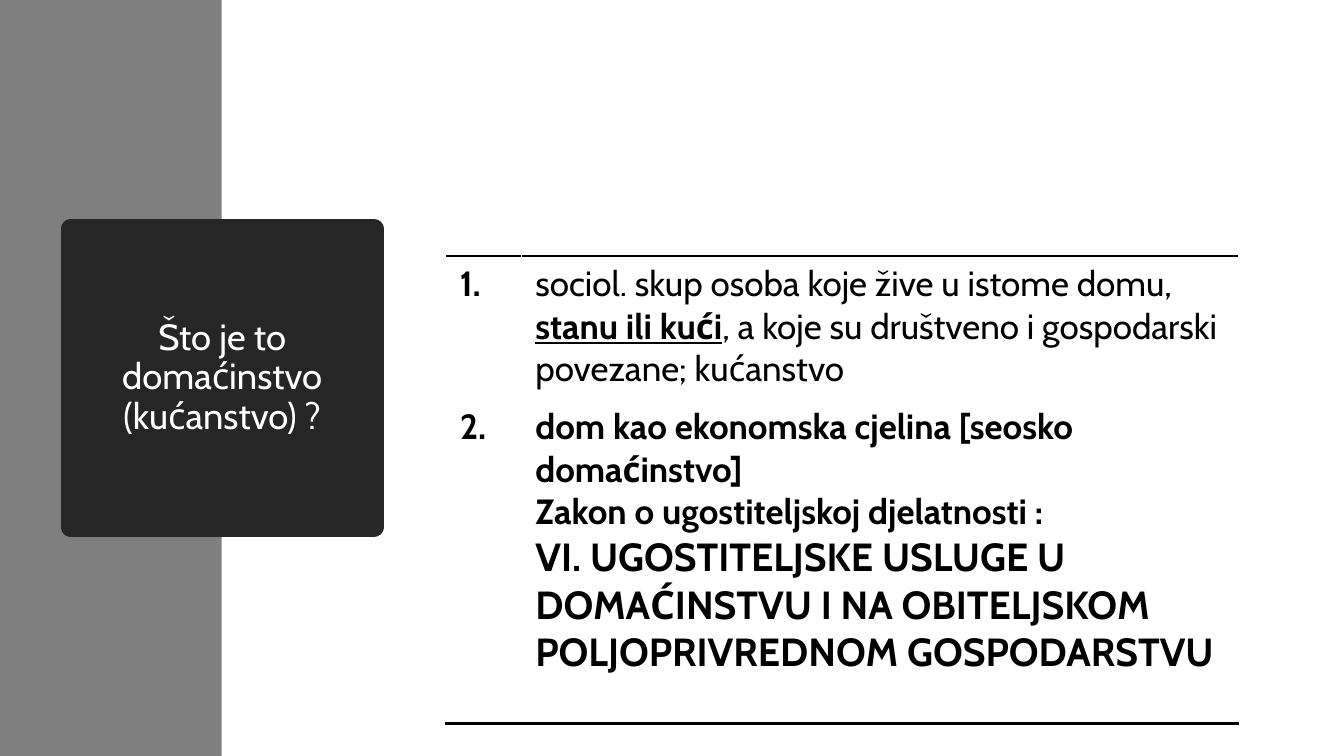
from lxml.etree import SubElement
from pptx import Presentation
from pptx.dml.color import RGBColor
from pptx.enum.shapes import MSO_SHAPE
from pptx.enum.text import MSO_ANCHOR, PP_ALIGN
from pptx.oxml import parse_xml
from pptx.oxml.ns import nsdecls, qn
from pptx.util import Inches, Pt

COLORS = {"band": "7F7F7F", "card": "262626", "paper": "FFFFFF", "ink": "000000"}
FONT = "Cabin"

# Each paragraph: size and its runs as (text, bold, underlined)
DEFINITIONS = [
    ("1.", [(25, [("sociol. skup osoba koje žive u istome domu, ", False, False),
                  ("stanu ili kući", True, True),
                  (", a koje su društveno i gospodarski povezane; kućanstvo", False, False)])]),
    ("2.", [(25, [("dom kao ekonomska cjelina [seosko domaćinstvo]", True, False)]),
            (25, [("Zakon o ugostiteljskoj djelatnosti :", True, False)]),
            (28, [("VI. UGOSTITELJSKE USLUGE U DOMAĆINSTVU I NA OBITELJSKOM "
                   "POLJOPRIVREDNOM GOSPODARSTVU", True, False)])]),
]


def color(name):
    return RGBColor.from_string(COLORS[name])


def set_font(paragraph, size, ink):
    paragraph.font.name = FONT
    paragraph.font.size = Pt(size)
    paragraph.font.color.rgb = color(ink)


def add_band(slide, left, top, width, height):
    band = slide.shapes.add_shape(MSO_SHAPE.RECTANGLE, Inches(left), Inches(top),
                                  Inches(width), Inches(height))
    band.shadow.inherit = False
    band.fill.solid()
    band.fill.fore_color.rgb = color("band")
    band.line.fill.background()
    # The title card lies over the band
    slide.shapes.title.element.addprevious(band.element)


def place_title(slide, left, top, width, height):
    title = slide.shapes.title
    title.left, title.top = Inches(left), Inches(top)
    title.width, title.height = Inches(width), Inches(height)
    title.fill.solid()
    title.fill.fore_color.rgb = color("card")
    title.line.color.rgb = color("card")
    title.line.width = Pt(13.75)
    SubElement(title.line._get_or_add_ln(), qn("a:round"))
    frame = title.text_frame
    frame.word_wrap = True
    frame.vertical_anchor = MSO_ANCHOR.MIDDLE
    question = frame.paragraphs[0]
    question.text = "Što je to domaćinstvo (kućanstvo) ?"
    question.alignment = PP_ALIGN.CENTER
    question.line_spacing = 0.9
    set_font(question, 26, "paper")


def add_rule(cell, side):
    rule = parse_xml(
        f'<a:{side} {nsdecls("a")} w="{Pt(2)}"><a:solidFill>'
        f'<a:srgbClr val="{COLORS["ink"]}"/></a:solidFill></a:{side}>')
    cell._tc.get_or_add_tcPr().insert(0, rule)


def fill_cell(cell, paragraphs):
    cell.fill.solid()
    cell.fill.fore_color.rgb = color("paper")
    cell.margin_left = cell.margin_right = Inches(0.14)
    cell.margin_top = cell.margin_bottom = Inches(0.07)
    frame = cell.text_frame
    for index, (size, runs) in enumerate(paragraphs):
        paragraph = frame.add_paragraph() if index else frame.paragraphs[0]
        set_font(paragraph, size, "ink")
        for text, bold, underlined in runs:
            run = paragraph.add_run()
            run.text = text
            run.font.bold = bold
            run.font.underline = underlined


def add_definitions(slide, left, top, width, height):
    number_width, first_height = 0.75, 1.42
    table = slide.shapes.add_table(len(DEFINITIONS), 2, Inches(left), Inches(top),
                                   Inches(width), Inches(height)).table
    table.first_row = table.horz_banding = False
    table.columns[0].width = Inches(number_width)
    table.columns[1].width = Inches(width - number_width)
    table.rows[0].height = Inches(first_height)
    table.rows[1].height = Inches(height - first_height)
    for row, (number, paragraphs) in enumerate(DEFINITIONS):
        fill_cell(table.cell(row, 0), [(25, [(number, True, False)])])
        fill_cell(table.cell(row, 1), paragraphs)
    # Rules above and below the whole table
    for column in range(2):
        add_rule(table.cell(0, column), "lnT")
        add_rule(table.cell(len(DEFINITIONS) - 1, column), "lnB")


def main():
    deck = Presentation()
    deck.slide_width, deck.slide_height = Inches(13.33), Inches(7.5)
    slide = deck.slides.add_slide(deck.slide_layouts[5])
    add_band(slide, 0, 0, 2.2, 7.5)
    place_title(slide, 0.7, 2.27, 3.01, 2.96)
    add_definitions(slide, 4.42, 2.54, 7.86, 4.64)
    deck.save("out.pptx")


if __name__ == "__main__":
    main()
